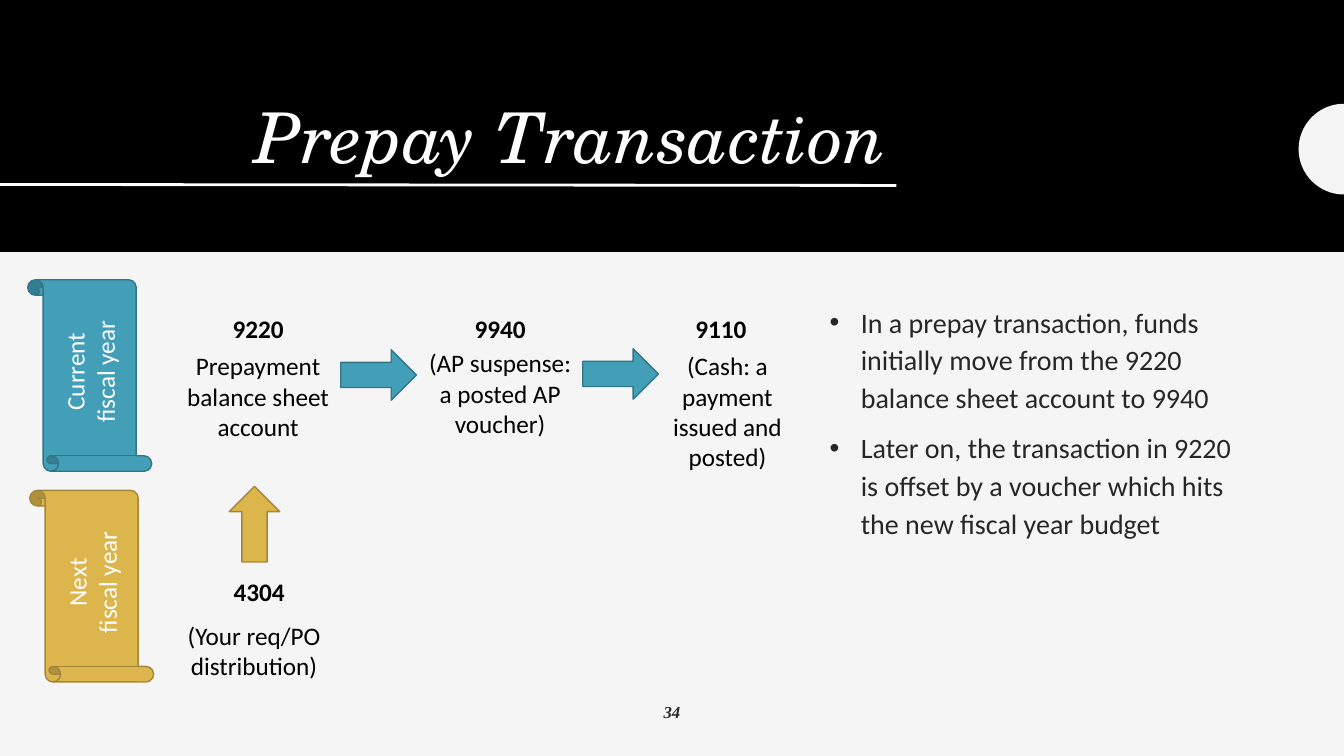
from math import cos, pi, sin

from lxml.etree import SubElement
from pptx import Presentation
from pptx.dml.color import RGBColor
from pptx.enum.shapes import MSO_CONNECTOR, MSO_SHAPE
from pptx.enum.text import MSO_ANCHOR, MSO_AUTO_SIZE, PP_ALIGN
from pptx.oxml.ns import qn
from pptx.util import Emu, Pt

PX = 9144
BLACK = RGBColor(0x00, 0x00, 0x00)
WHITE = RGBColor(0xFF, 0xFF, 0xFF)
PAPER = RGBColor(0xF5, 0xF5, 0xF5)
INK = RGBColor(0x26, 0x26, 0x26)
TEAL = RGBColor(0x43, 0x9E, 0xB7)
TEAL_EDGE = RGBColor(0x32, 0x75, 0x87)
GOLD = RGBColor(0xDC, 0xB6, 0x4D)
GOLD_EDGE = RGBColor(0xA3, 0x87, 0x39)


class SlideBuilder:
    font = "Calibri"
    title_font = "TeX Gyre Schola"
    number_font = "Times New Roman"

    def __init__(self, deck):
        self.page = deck.slides.add_slide(deck.slide_layouts[5])
        self.page.background.fill.solid()
        self.page.background.fill.fore_color.rgb = PAPER

    def set_text(self, frame, text, size, color, font=None, bold=False, italic=False,
                 align=PP_ALIGN.CENTER):
        frame.text = text
        frame.word_wrap = True
        for para in frame.paragraphs:
            para.alignment = align
            for span in para.runs:
                span.font.name = font or self.font
                span.font.size = Pt(size)
                span.font.bold = bold
                span.font.italic = italic
                span.font.color.rgb = color

    def paint(self, shape, fill, edge=None):
        shape.shadow.inherit = False
        shape.fill.solid()
        shape.fill.fore_color.rgb = fill
        if edge is None:
            shape.line.fill.background()
        else:
            shape.line.color.rgb = edge
            shape.line.width = Pt(1)

    def shape(self, kind, left, top, width, height, fill, edge=None, rotation=0):
        shape = self.page.shapes.add_shape(
            kind, *(Emu(n * PX) for n in (left, top, width, height)))
        shape.rotation = rotation
        self.paint(shape, fill, edge)
        return shape

    def arrow(self, left, top, fill, edge, rotation=0):
        self.shape(MSO_SHAPE.RIGHT_ARROW, left, top, 75, 50, fill, edge, rotation)

    def scroll(self, left, top, text, fill, edge):
        scroll = self.shape(MSO_SHAPE.HORIZONTAL_SCROLL, left, top, 190, 123, fill, edge, 270)
        scroll.text_frame.vertical_anchor = MSO_ANCHOR.MIDDLE
        self.set_text(scroll.text_frame, text, 18, WHITE)

    def label(self, left, top, width, height, text, size=18, color=BLACK, **style):
        box = self.page.shapes.add_textbox(
            *(Emu(n * PX) for n in (left, top, width, height)))
        self.set_text(box.text_frame, text, size, color, **style)
        return box

    def title(self, left, top, width, height, text):
        box = self.page.shapes.title
        box.left, box.top, box.width, box.height = (
            Emu(n * PX) for n in (left, top, width, height))
        frame = box.text_frame
        self.set_text(frame, text, 50, WHITE, font=self.title_font, italic=True,
                      align=PP_ALIGN.RIGHT)
        frame.auto_size = MSO_AUTO_SIZE.NONE
        frame.vertical_anchor = MSO_ANCHOR.BOTTOM
        frame.paragraphs[0].line_spacing = 0.9

    def line(self, x1, y1, x2, y2, color):
        line = self.page.shapes.add_connector(
            MSO_CONNECTOR.STRAIGHT, *(Emu(n * PX) for n in (x1, y1, x2, y2)))
        line.line.color.rgb = color
        line.line.width = Pt(2)
        SubElement(line._element.spPr, qn("a:effectLst"))

    def half_disc(self, x, y, radius, fill, steps=48):
        points = [(round((x - radius * sin(pi * n / steps)) * PX),
                   round((y - radius * cos(pi * n / steps)) * PX))
                  for n in range(steps + 1)]
        outline = self.page.shapes.build_freeform(*points[0])
        outline.add_line_segments(points[1:], close=True)
        self.paint(outline.convert_to_shape(), fill)

    def bullets(self, left, top, width, height, items):
        box = self.label(left, top, width, height, "\n".join(items), 20, INK,
                         align=PP_ALIGN.LEFT)
        for para in box.text_frame.paragraphs:
            para.line_spacing = 1.12
            para.space_before = Pt(9)
            properties = para._p.get_or_add_pPr()
            properties.set("marL", str(31 * PX))
            properties.set("indent", str(-31 * PX))
            SubElement(properties, qn("a:buFont"), typeface="Arial")
            SubElement(properties, qn("a:buChar"), char="•")


def main():
    deck = Presentation()
    deck.slide_width = Emu(1333 * PX)
    deck.slide_height = Emu(750 * PX)
    slide = SlideBuilder(deck)

    band = slide.shape(MSO_SHAPE.RECTANGLE, 0, 0, 1333, 250, BLACK)
    slide.page.shapes.title._element.addprevious(band._element)
    slide.title(105, 47, 784, 135, "Prepay Transaction")
    slide.line(0, 183, 889, 184, WHITE)
    slide.half_disc(1333, 148, 45, PAPER)

    slide.bullets(813, 294, 437, 387, [
        "In a prepay transaction, funds initially move from the 9220 balance sheet account to 9940",
        "Later on, the transaction in 9220 is offset by a voucher which hits the new fiscal year budget",
    ])

    slide.scroll(-6, 311, "Current\nfiscal year", TEAL, TEAL_EDGE)
    slide.scroll(-4, 520, "Next\nfiscal year", GOLD, GOLD_EDGE)

    for left, top, width, code in [
        (174, 306, 164, "9220"),
        (414, 306, 164, "9940"),
        (640, 306, 150, "9110"),
        (175, 567, 164, "4304"),
    ]:
        slide.label(left, top, width, 40, code, bold=True)

    for left, top, width, height, meaning in [
        (174, 343, 164, 101, "Prepayment balance sheet account"),
        (414, 340, 164, 101, "(AP suspense: a posted AP voucher)"),
        (653, 343, 137, 131, "(Cash: a payment issued and posted)"),
        (170, 610, 164, 71, "(Your req/PO distribution)"),
    ]:
        slide.label(left, top, width, height, meaning)

    slide.arrow(338, 347, TEAL, TEAL_EDGE)
    slide.arrow(578, 346, TEAL, TEAL_EDGE)
    slide.arrow(215, 495, GOLD, GOLD_EDGE, rotation=270)

    slide.label(0, 691, 1333, 40, "34", 12, INK, font=slide.number_font,
                bold=True, italic=True)
    deck.save("out.pptx")


if __name__ == "__main__":
    main()
